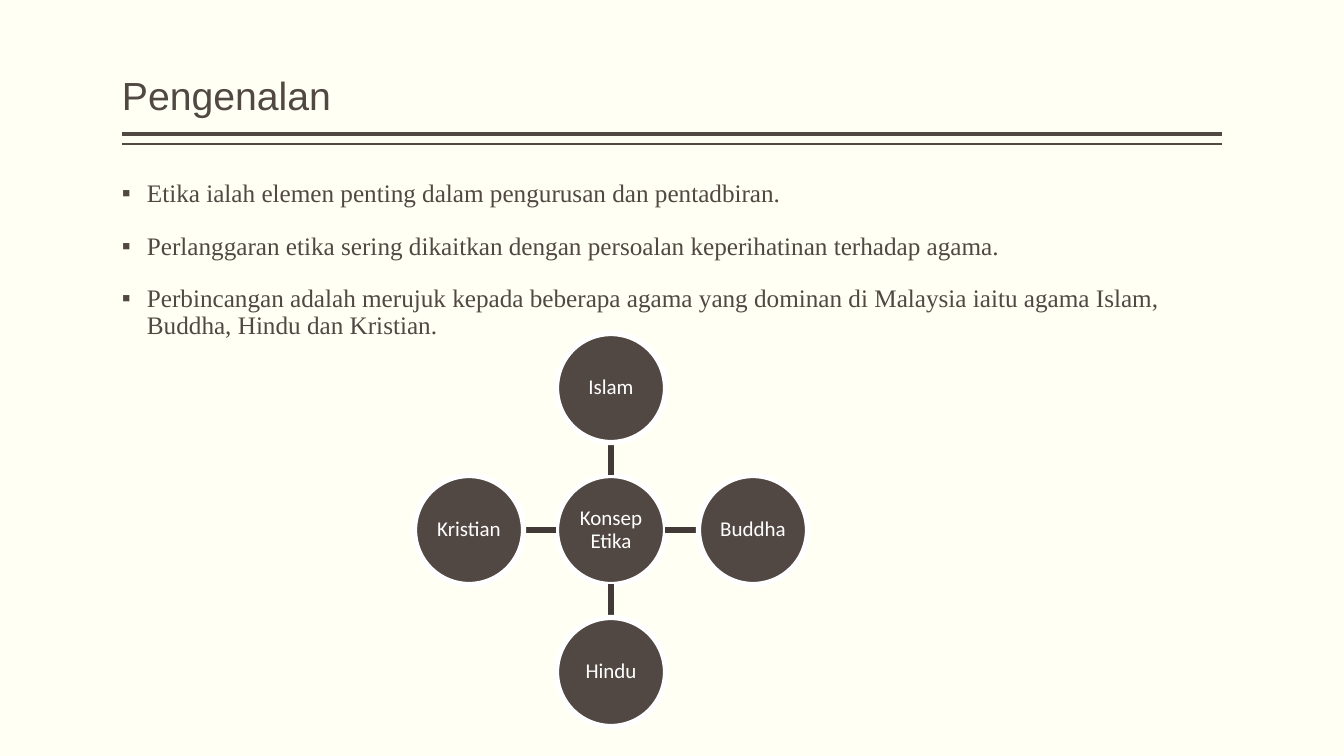
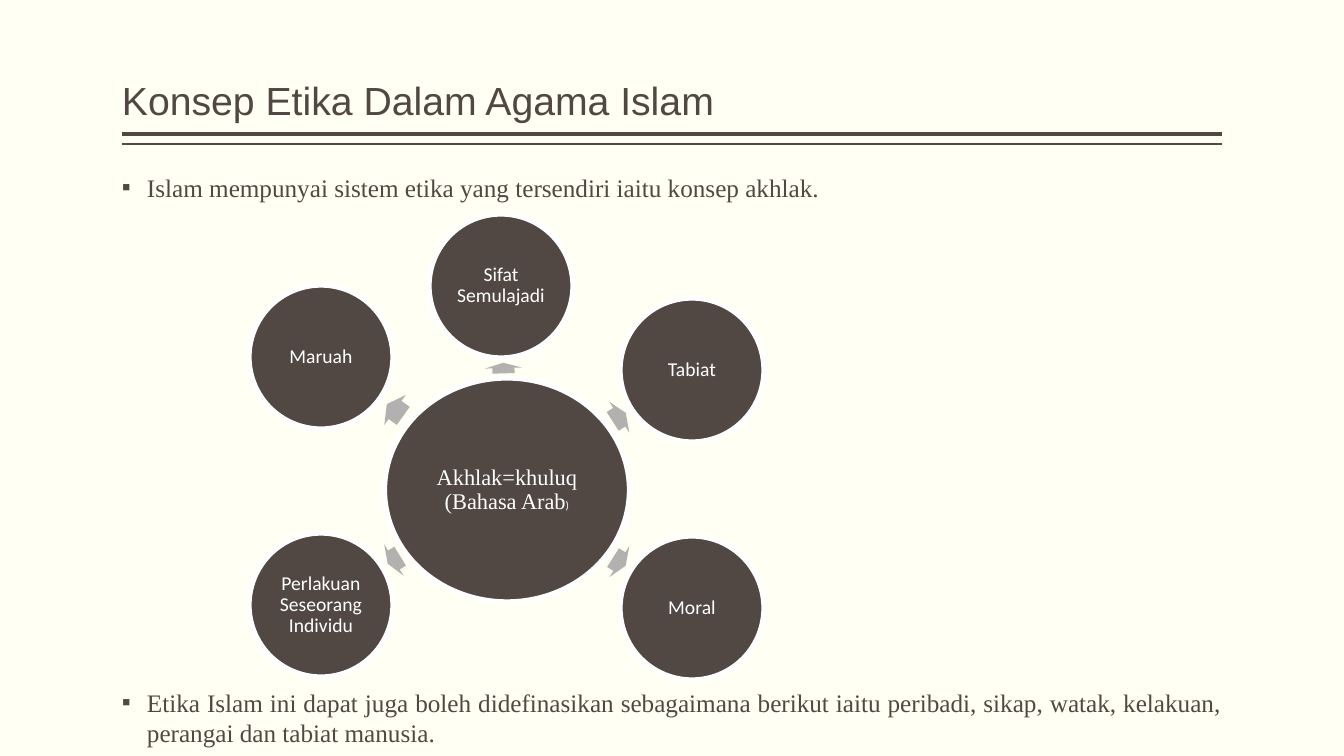
import math

from lxml import etree
from pptx import Presentation
from pptx.dml.color import RGBColor
from pptx.enum.shapes import MSO_CONNECTOR, MSO_SHAPE
from pptx.enum.text import MSO_ANCHOR, PP_ALIGN
from pptx.oxml.ns import qn
from pptx.util import Emu, Pt

WIDTH, HEIGHT = 1344, 756
SCALE = 12192000 / WIDTH
LEFT, CONTENT = 122, 1100
INDENT = 25
OUTLINE = 3.78

STRAIGHT = MSO_CONNECTOR.STRAIGHT
ELLIPSE, ARROW = MSO_SHAPE.OVAL, MSO_SHAPE.RIGHT_ARROW
TOP, MIDDLE, BOTTOM = MSO_ANCHOR.TOP, MSO_ANCHOR.MIDDLE, MSO_ANCHOR.BOTTOM
ALIGN_LEFT, CENTER, JUSTIFY = PP_ALIGN.LEFT, PP_ALIGN.CENTER, PP_ALIGN.JUSTIFY

COLORS = {
    "paper": "FFFFF3",
    "brown": "514843",
    "spoke": "413A36",
    "arrow": "B3B1B0",
    "white": "FFFFFF",
}
SANS, SERIF, LABEL = "Arial", "Times New Roman", "Calibri"


def px(length):
    return Emu(round(length * SCALE))


def color(name):
    return RGBColor.from_string(COLORS[name])


class Slides:
    def __init__(self):
        self.deck = Presentation()
        self.deck.slide_width, self.deck.slide_height = px(WIDTH), px(HEIGHT)
        paper = self.deck.slide_master.background.fill
        paper.solid()
        paper.fore_color.rgb = color("paper")
        self.page = None

    def start(self, title, top):
        self.page = self.deck.slides.add_slide(self.deck.slide_layouts[6])
        self.line(LEFT + CONTENT, 134, LEFT, 134, "brown", 3)
        self.line(LEFT + CONTENT, 144, LEFT, 144, "brown", 1)
        frame = self.text_box(top, 121, BOTTOM)
        para = frame.paragraphs[0]
        para.line_spacing = 0.9
        self.span(para, title, 28, SANS, "brown")

    def line(self, x1, y1, x2, y2, tone, weight):
        line = self.page.shapes.add_connector(STRAIGHT, px(x1), px(y1), px(x2), px(y2))
        line.line.color.rgb = color(tone)
        line.line.width = Pt(weight)
        etree.SubElement(line._element.spPr, qn("a:effectLst"))

    def text_box(self, top, height, anchor):
        box = self.page.shapes.add_textbox(px(LEFT), px(top), px(CONTENT), px(height))
        self.prepare(box.text_frame, anchor, 0, 5)
        return box.text_frame

    def prepare(self, frame, anchor, side, edge):
        frame.word_wrap = True
        frame.vertical_anchor = anchor
        frame.margin_left = frame.margin_right = px(side)
        frame.margin_top = frame.margin_bottom = px(edge)

    def span(self, para, text, size, font, tone):
        span = para.add_run()
        span.text = text
        span.font.size = Pt(size)
        span.font.name = font
        span.font.color.rgb = color(tone)

    def bullets(self, top, height, texts, spacing, align=ALIGN_LEFT):
        frame = self.text_box(top, height, TOP)
        for index, text in enumerate(texts):
            para = frame.add_paragraph() if index else frame.paragraphs[0]
            para.alignment = align
            para.line_spacing = spacing
            para.space_before = Pt(18 if index else 0)
            props = para._p.get_or_add_pPr()
            props.set("marL", str(px(INDENT)))
            props.set("indent", str(px(-INDENT)))
            etree.SubElement(props, qn("a:buFont"), typeface=SANS)
            etree.SubElement(props, qn("a:buChar"), char="▪")
            self.span(para, text, 18, SERIF, "brown")

    def shape(self, kind, x, y, width, height, tone):
        shape = self.page.shapes.add_shape(
            kind, px(x - width / 2), px(y - height / 2), px(width), px(height))
        shape.shadow.inherit = False
        shape.fill.solid()
        shape.fill.fore_color.rgb = color(tone)
        shape.line.fill.background()
        return shape

    def circle(self, x, y, width, height, spans):
        circle = self.shape(ELLIPSE, x, y, width, height, "brown")
        circle.line.color.rgb = color("white")
        circle.line.width = Pt(OUTLINE)
        self.prepare(circle.text_frame, MIDDLE, 1, 1)
        para = circle.text_frame.paragraphs[0]
        para.alignment = CENTER
        para.line_spacing = 0.9
        for text, size, font in spans:
            self.span(para, text, size, font, "white")

    def arrow(self, x, y, width, height, angle):
        arrow = self.shape(ARROW, x, y, width, height, "arrow")
        arrow.adjustments[0], arrow.adjustments[1] = 0.6, 0.5
        arrow.rotation = angle % 360


def introduction(slides):
    slides.start("Pengenalan", 3)
    slides.bullets(176, 504, [
        "Etika ialah elemen penting dalam pengurusan dan pentadbiran.",
        "Perlanggaran etika sering dikaitkan dengan persoalan keperihatinan terhadap agama.",
        "Perbincangan adalah merujuk kepada beberapa agama yang dominan di Malaysia "
        "iaitu agama Islam, Buddha, Hindu dan Kristian.",
    ], 0.9)
    x, y, size, reach = 611, 530, 109, 142
    near, far = size / 2, reach - size / 2
    slides.circle(x, y, size, size, [("Konsep Etika", 15, LABEL)])
    religions = [("Islam", 0, -1), ("Buddha", 1, 0), ("Hindu", 0, 1), ("Kristian", -1, 0)]
    for name, dx, dy in religions:
        slides.line(x + dx * near, y + dy * near, x + dx * far, y + dy * far, "spoke", OUTLINE)
        slides.circle(x + dx * reach, y + dy * reach, size, size, [(name, 15, LABEL)])


def islamic_ethics(slides):
    slides.start("Konsep Etika Dalam Agama Islam", 8)
    slides.bullets(176, 35, [
        "Islam mempunyai sistem etika yang tersendiri iaitu konsep akhlak.",
    ], 0.7)
    slides.bullets(682, 68, [
        "Etika Islam ini dapat juga boleh didefinasikan sebagaimana berikut iaitu peribadi, "
        "sikap, watak, kelakuan, perangai dan tabiat manusia.",
    ], 1.0, JUSTIFY)
    hub_x, hub_y, hub_width, hub_height, size = 507, 490, 245, 224, 144
    slides.circle(hub_x, hub_y, hub_width, hub_height, [
        ("Akhlak=khuluq (Bahasa Arab", 16, SERIF), (")", 8, LABEL)])
    traits = [
        ("Sifat Semulajadi", 501, 286),
        ("Tabiat", 692, 370),
        ("Moral", 692, 608),
        ("Perlakuan Seseorang Individu", 321, 605),
        ("Maruah", 321, 357),
    ]
    for name, x, y in traits:
        angle = math.atan2(y - hub_y, x - hub_x)
        cos, sin = math.cos(angle), math.sin(angle)
        near = 1 / math.hypot(2 * cos / hub_width, 2 * sin / hub_height)
        far = math.hypot(x - hub_x, y - hub_y) - size / 2
        middle = (near + far) / 2
        slides.arrow(hub_x + middle * cos, hub_y + middle * sin,
                     (far - near) * 0.53, 37, math.degrees(angle))
        slides.circle(x, y, size, size, [(name, 14, LABEL)])


def main():
    slides = Slides()
    introduction(slides)
    islamic_ethics(slides)
    slides.deck.save("out.pptx")


if __name__ == "__main__":
    main()
